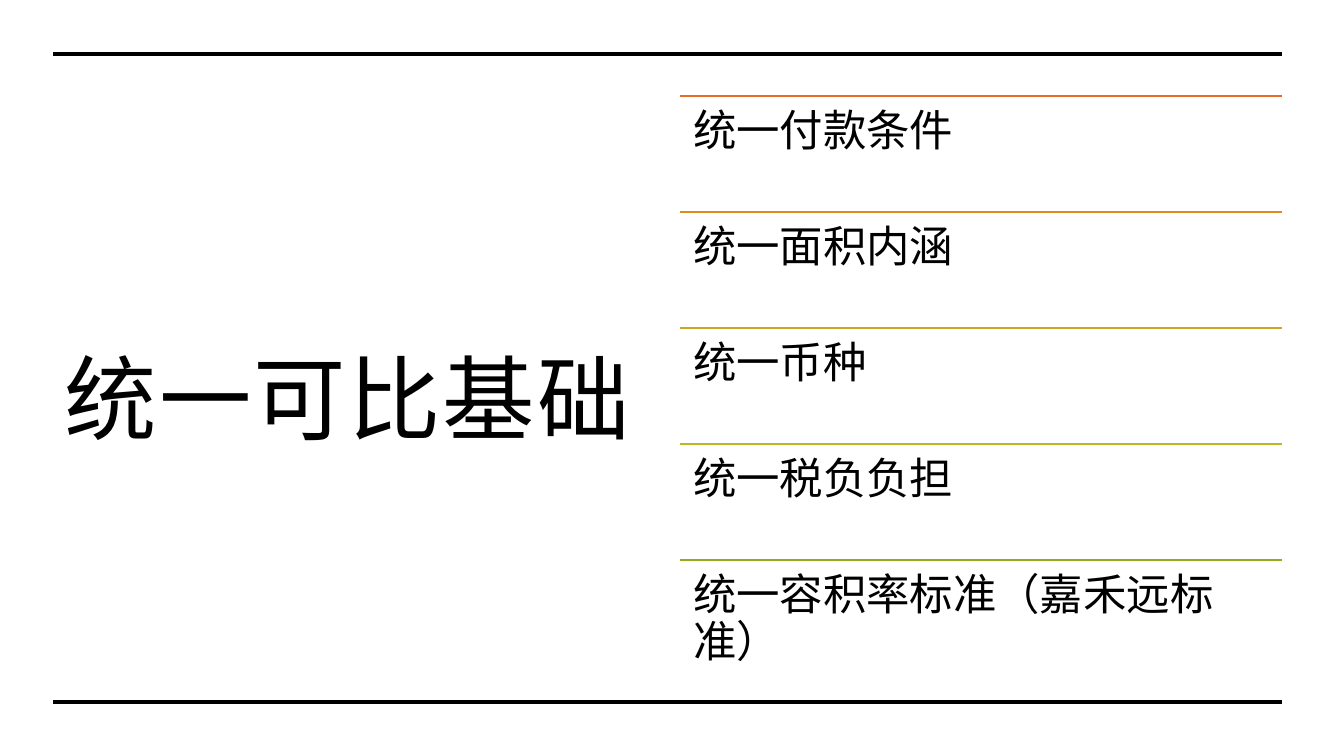
from lxml import etree
from pptx import Presentation
from pptx.dml.color import RGBColor
from pptx.enum.shapes import MSO_CONNECTOR
from pptx.enum.text import MSO_ANCHOR
from pptx.oxml.ns import qn
from pptx.util import Pt

STRAIGHT = MSO_CONNECTOR.STRAIGHT
TOP, MIDDLE = MSO_ANCHOR.TOP, MSO_ANCHOR.MIDDLE

HEADING = "统一可比基础"
CRITERIA = [
    ("统一付款条件", "E66B29"),
    ("统一面积内涵", "E08A1E"),
    ("统一币种", "CEA51F"),
    ("统一税负负担", "BCB91F"),
    ("统一容积率标准（嘉禾远标准）", "91AB1F"),
]
FONT = "Noto Sans CJK SC"
BLACK = "000000"

SLIDE_W, SLIDE_H = 1344, 756
EMU_PER_PX = 12192000 / SLIDE_W
LEFT, RIGHT = 53, 1282
FRAME_TOP, FRAME_BOTTOM = 54, 702
BODY_TOP, ROW_H = 96, 116
HEADING_W = 619
LIST_LEFT = 680


def px(length):
    """Turn pixels into EMU."""
    return round(length * EMU_PER_PX)


def color(hex_code):
    """Turn a hex string into a colour."""
    return RGBColor.from_string(hex_code)


def add_rule(slide, left, y, hex_code, weight):
    """Draw a horizontal line that ends at the right margin."""
    rule = slide.shapes.add_connector(STRAIGHT, px(left), px(y), px(RIGHT), px(y))
    rule.line.color.rgb = color(hex_code)
    rule.line.width = Pt(weight)
    etree.SubElement(rule._element.spPr, qn("a:effectLst"))


def add_text(slide, text, box, *, size, insets, spacing, anchor=TOP, after=0, tracking=0):
    """Add a wrapped text box with one formatted paragraph."""
    frame = slide.shapes.add_textbox(*map(px, box)).text_frame
    frame.word_wrap = True
    frame.vertical_anchor = anchor
    (frame.margin_left, frame.margin_top,
     frame.margin_right, frame.margin_bottom) = map(px, insets)
    paragraph = frame.paragraphs[0]
    paragraph.line_spacing = spacing
    paragraph.space_after = Pt(after)
    run = paragraph.add_run()
    run.text = text
    run.font.size = Pt(size)
    run.font.name = FONT
    run.font.color.rgb = color(BLACK)
    properties = run.font._element
    etree.SubElement(properties, qn("a:ea")).set("typeface", FONT)
    if tracking:
        properties.set("spc", str(round(tracking * 100)))


def main():
    """Build the slide and save it."""
    deck = Presentation()
    deck.slide_width, deck.slide_height = px(SLIDE_W), px(SLIDE_H)
    slide = deck.slides.add_slide(deck.slide_layouts[6])

    heading_box = (LEFT, BODY_TOP, HEADING_W, ROW_H * len(CRITERIA))
    add_text(slide, HEADING, heading_box, size=66, insets=(12, 12, 12, 10),
             spacing=1.18, anchor=MIDDLE, tracking=1.5)
    for y in (FRAME_TOP, FRAME_BOTTOM):
        add_rule(slide, LEFT, y, BLACK, 2.25)

    for row, (criterion, rule_color) in enumerate(CRITERIA):
        y = BODY_TOP + row * ROW_H
        add_rule(slide, LIST_LEFT, y, rule_color, 1)
        add_text(slide, criterion, (LIST_LEFT, y, RIGHT - LIST_LEFT, ROW_H),
                 size=31, insets=(13, 13, 13, 13), spacing=0.9, after=11)

    deck.save("out.pptx")


if __name__ == "__main__":
    main()
